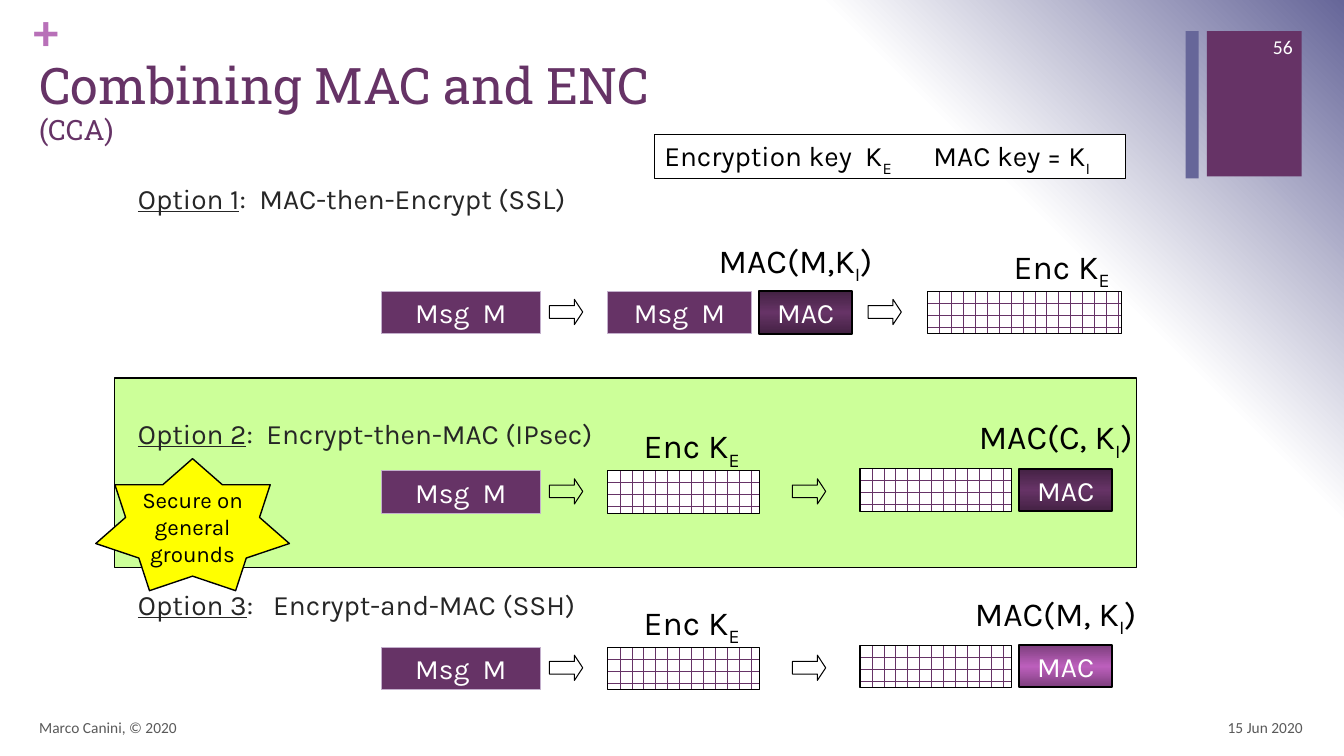
from lxml import etree
from pptx import Presentation
from pptx.dml.color import RGBColor
from pptx.enum import dml, shapes, text
from pptx.oxml.ns import qn
from pptx.util import Inches, Pt

PURPLE, SLATE, BLACK, WHITE, GREY = "663366", "666699", "000000", "FFFFFF", "595959"
DARK_MAC = [(0, "442244"), (50, PURPLE), (100, "442244")]
LIGHT_MAC = [(0, "7D3F7D"), (50, "BC5FBC"), (100, "7D3F7D")]
BACKDROP = [(0, WHITE), (75, WHITE), (100, SLATE)]

# Spans are (text, style); style is "", "sub" or "under".
TITLE = [("Combining MAC and ENC", "")]
SUBTITLE = [("(CCA)", "")]
KEYS = [("Encryption key  K", ""), ("E", "sub"), ("\tMAC key = K", ""), ("I", "sub")]
ENC = [("Enc K", ""), ("E", "sub")]
BADGE = [("Secure on general grounds", "")]


def mac_of(data):
    return [(f"MAC({data}K", ""), ("I", "sub"), (")", "")]


def encrypt_first(data, mac_colors):
    """Parts of an option that encrypts before it appends the MAC."""
    return [
        ("message", 3.78, 0, 1.58), ("arrow", 5.45), ("arrow", 7.86),
        ("cipher", 6.03, 0, 1.5), ("label", 6.86, -0.5, ENC),
        ("mac", 10.11, -0.02, mac_colors), ("label", 10.47, -0.59, mac_of(data)),
        ("cipher", 8.53, -0.02, 1.5),
    ]


# Option name, description, top of the description, top of the flow, parts
OPTIONS = [
    ("Option 1", ":  MAC-then-Encrypt (SSL)", 1.75, 2.89, [
        ("message", 3.78, 0, 1.58), ("arrow", 5.45), ("message", 6.03, 0, 1.42),
        ("mac", 7.53, 0, DARK_MAC), ("arrow", 8.61), ("cipher", 9.2, 0, 1.92),
        ("label", 10.53, -0.5, ENC), ("label", 7.89, -0.56, mac_of("M,")),
    ]),
    ("Option 2", ":  Encrypt-then-MAC (IPsec)", 4.08, 4.67, encrypt_first("C, ", DARK_MAC)),
    ("Option 3", ":   Encrypt-and-MAC (SSH)", 5.78, 6.42, encrypt_first("M, ", LIGHT_MAC)),
]
FOOTERS = [
    ("15 Jun 2020", (9.91, 7.02, 3.11, 0.4), 11, GREY, "RIGHT"),
    ("Marco Canini, © 2020", (0.29, 7.02, 8.93, 0.4), 11, GREY, "LEFT"),
    ("56", (12.11, 0.26, 0.81, 0.4), 14, WHITE, "RIGHT"),
]
BOX_HEIGHT, LABEL_HEIGHT, LABEL_WIDTH, MAC_WIDTH = 0.42, 0.5, 1.8, 0.92


def rgb(code):
    return RGBColor.from_string(code)


def write_gradient(owner, stops, shade, **shade_format):
    """Replace the gradient found inside an element by these stops and shading."""
    gradient = next(owner.iter(qn("a:gradFill")))
    for child in list(gradient):
        gradient.remove(child)
    stop_list = etree.SubElement(gradient, qn("a:gsLst"))
    for position, color in stops:
        stop = etree.SubElement(stop_list, qn("a:gs"), pos=str(position * 1000))
        etree.SubElement(stop, qn("a:srgbClr"), val=color)
    return etree.SubElement(gradient, qn(shade), **shade_format)


def write(shape, lines, size=20, color=BLACK, font="Karla", align="LEFT",
          anchor="TOP", wrap=True, insets=(0.1, 0.05, 0.1, 0.05), bold=False):
    """Fill a shape with lines of spans; size may be one number or one per line."""
    frame = shape.text_frame
    frame.word_wrap = wrap
    frame.vertical_anchor = getattr(text.MSO_ANCHOR, anchor)
    (frame.margin_left, frame.margin_top,
     frame.margin_right, frame.margin_bottom) = map(Inches, insets)
    sizes = size if isinstance(size, tuple) else (size,) * len(lines)
    for index, (spans, points) in enumerate(zip(lines, sizes)):
        para = frame.add_paragraph() if index else frame.paragraphs[0]
        para.alignment = getattr(text.PP_ALIGN, align)
        for words, style in spans:
            span = para.add_run()
            span.text = words
            span.font.name, span.font.size, span.font.bold = font, Pt(points), bold
            span.font.color.rgb = rgb(color)
            if style == "under":
                span.font.underline = True
            elif style == "sub":
                span._r.get_or_add_rPr().set("baseline", "-25000")
    return frame


def add_text(page, at, lines, **text_format):
    box = page.shapes.add_textbox(*map(Inches, at))
    return write(box, lines, **text_format)


def add_box(page, at, kind="RECTANGLE", fill=None, line=None, weight=0.75):
    """Fill is a colour, a list of gradient stops, "brick" or None."""
    box = page.shapes.add_shape(getattr(shapes.MSO_SHAPE, kind), *map(Inches, at))
    box.shadow.inherit = False
    if fill is None:
        box.fill.background()
    elif isinstance(fill, list):
        box.fill.gradient()
        write_gradient(box._element.spPr, fill, "a:lin", ang="5400000", scaled="0")
    elif fill == "brick":
        box.fill.patterned()
        box.fill.pattern = dml.MSO_PATTERN.HORIZONTAL_BRICK
        box.fill.fore_color.rgb, box.fill.back_color.rgb = rgb(PURPLE), rgb(WHITE)
    else:
        box.fill.solid()
        box.fill.fore_color.rgb = rgb(fill)
    if line:
        box.line.color.rgb, box.line.width = rgb(line), Pt(weight)
    else:
        box.line.fill.background()
    return box


def add_part(page, flow_top, kind, left, shift=0, detail=None):
    """Draw one step of a flow; a label's left is its centre."""
    top = flow_top + shift
    block = dict(color=WHITE, align="CENTER", anchor="MIDDLE", wrap=False)
    if kind == "message":
        box = add_box(page, (left, top, detail, BOX_HEIGHT), fill=PURPLE, line="C3AFCC")
        write(box, [[("Msg  M", "")]], **block)
    elif kind == "mac":
        box = add_box(page, (left, top, MAC_WIDTH, BOX_HEIGHT),
                      fill=detail, line=BLACK, weight=1.5)
        write(box, [[("MAC", "")]], **block)
    elif kind == "cipher":
        add_box(page, (left, top, detail, BOX_HEIGHT), fill="brick", line=BLACK)
    elif kind == "arrow":
        arrow = add_box(page, (left, top + 0.08, 0.33, 0.25), "RIGHT_ARROW", line=BLACK)
        arrow.adjustments[1] = 0.33
    else:
        at = (left - LABEL_WIDTH / 2, top, LABEL_WIDTH, LABEL_HEIGHT)
        add_text(page, at, [detail], size=24, align="CENTER", wrap=False)


def main():
    deck = Presentation()
    deck.slide_width, deck.slide_height = Inches(13.33), Inches(7.5)
    page = deck.slides.add_slide(deck.slide_layouts[6])
    page.background.fill.gradient()
    shade = write_gradient(page._element, BACKDROP, "a:path", path="circle")
    etree.SubElement(shade, qn("a:fillToRect"), t="100000", r="100000")

    add_box(page, (11.97, 0.31, 0.94, 1.44), fill=PURPLE)
    add_box(page, (11.76, 0.31, 0.13, 1.46), fill=SLATE)
    add_text(page, (0.33, 0, 0.38, 0.61), [[("+", "")]], size=36, color="B870B8",
             font="Calibri", bold=True, insets=(0, 0, 0, 0))
    add_box(page, (1.14, 3.75, 10.13, 1.88), fill="CCFF99", line=BLACK)
    title = add_text(page, (0.29, 0.56, 11.45, 1.19), [TITLE, SUBTITLE],
                     size=(36, 20), color=PURPLE, font="Roboto Slab")
    for para in title.paragraphs:
        para.line_spacing = 0.9

    for name, description, top, flow_top, parts in OPTIONS:
        add_text(page, (1.27, top, 5.2, BOX_HEIGHT),
                 [[(name, "under"), (description, "")]], color="262626")
        for part in parts:
            add_part(page, flow_top, *part)

    keys = add_box(page, (6.49, 1.33, 4.67, 0.44), fill=WHITE, line=BLACK)
    frame = write(keys, [KEYS])
    tabs = etree.SubElement(frame.paragraphs[0]._p.get_or_add_pPr(), qn("a:tabLst"))
    etree.SubElement(tabs, qn("a:tab"), pos=str(Inches(2.67)), algn="l")

    badge = add_box(page, (0.95, 4.55, 1.92, 1.31), "STAR_7_POINT",
                    fill="FFFF00", line=BLACK, weight=1)
    write(badge, [BADGE], size=16, align="CENTER", anchor="MIDDLE", insets=(0, 0.1, 0, 0))
    for words, at, size, color, align in FOOTERS:
        add_text(page, at, [[(words, "")]], size=size, color=color,
                 font="Calibri", align=align, anchor="MIDDLE")
    deck.save("out.pptx")


if __name__ == "__main__":
    main()
